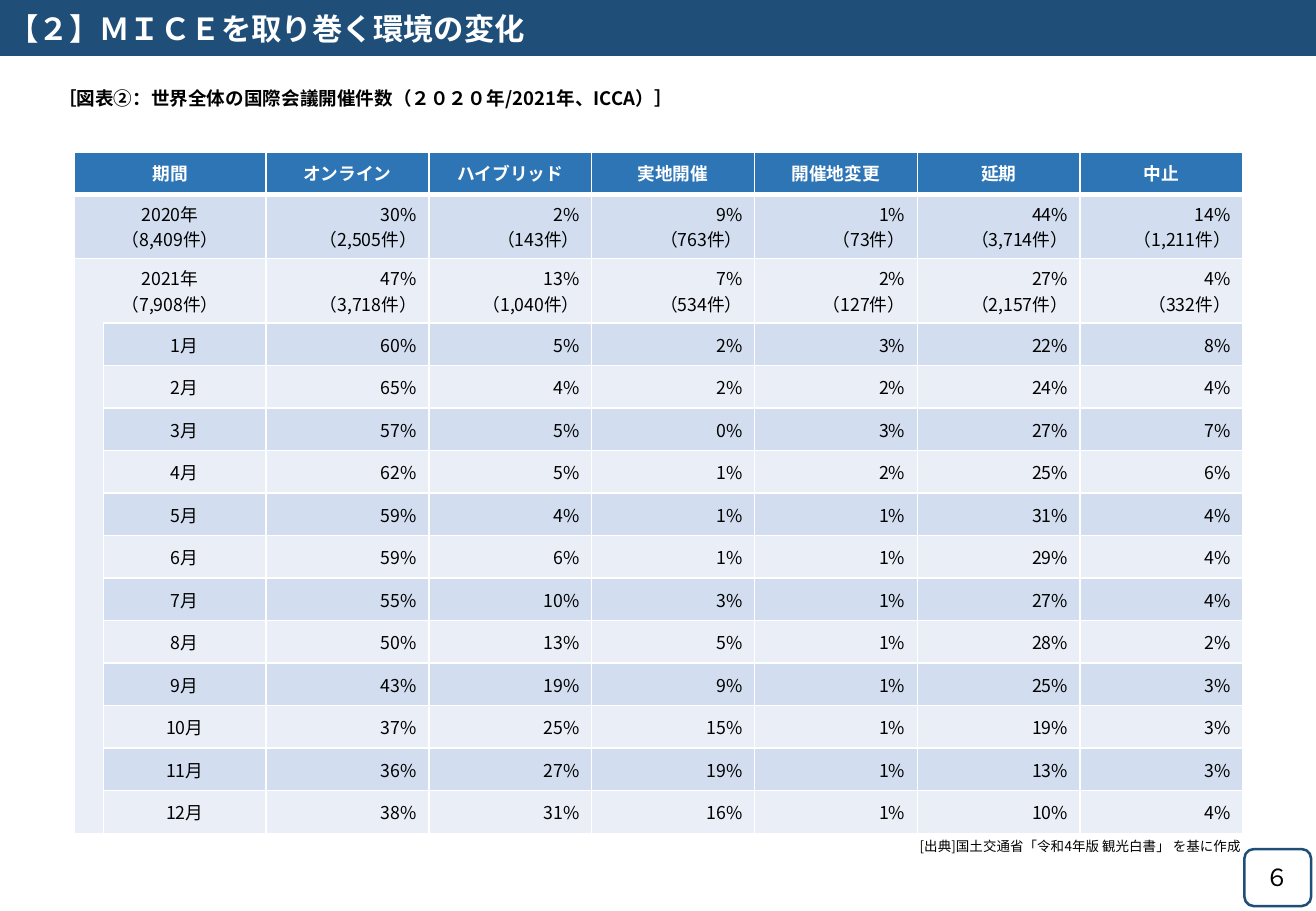
from lxml import etree
from pptx import Presentation
from pptx.dml.color import RGBColor
from pptx.enum.shapes import MSO_SHAPE
from pptx.enum.text import MSO_ANCHOR, PP_ALIGN
from pptx.oxml.ns import qn
from pptx.util import Inches, Pt

TITLE = "【２】ＭＩＣＥを取り巻く環境の変化"
CAPTION = "［図表②：世界全体の国際会議開催件数（２０２０年/2021年、ICCA）］"
CREDIT = "[出典]国土交通省「令和4年版 観光白書」 を基に作成"
PAGE_NUMBER = "６"
HEADINGS = ["期間", "オンライン", "ハイブリッド", "実地開催", "開催地変更", "延期", "中止"]
YEARS = [
    ("2020年", "8,409", [(30, "2,505"), (2, "143"), (9, "763"), (1, "73"), (44, "3,714"), (14, "1,211")]),
    ("2021年", "7,908", [(47, "3,718"), (13, "1,040"), (7, "534"), (2, "127"), (27, "2,157"), (4, "332")]),
]
MONTHS = [
    (60, 5, 2, 3, 22, 8),
    (65, 4, 2, 2, 24, 4),
    (57, 5, 0, 3, 27, 7),
    (62, 5, 1, 2, 25, 6),
    (59, 4, 1, 1, 31, 4),
    (59, 6, 1, 1, 29, 4),
    (55, 10, 3, 1, 27, 4),
    (50, 13, 5, 1, 28, 2),
    (43, 19, 9, 1, 25, 3),
    (37, 25, 15, 1, 19, 3),
    (36, 27, 19, 1, 13, 3),
    (38, 31, 16, 1, 10, 4),
]

FONT = "Noto Sans CJK JP"
NAVY = RGBColor(0x1F, 0x4E, 0x79)
BLUE = RGBColor(0x2E, 0x75, 0xB6)
DARK_BAND = RGBColor(0xD2, 0xDE, 0xEF)
LIGHT_BAND = RGBColor(0xEA, 0xEF, 0xF7)
WHITE = RGBColor(0xFF, 0xFF, 0xFF)
BLACK = RGBColor(0, 0, 0)
LEFT, CENTER, RIGHT = PP_ALIGN.LEFT, PP_ALIGN.CENTER, PP_ALIGN.RIGHT
MIDDLE = MSO_ANCHOR.MIDDLE
RECTANGLE, ROUNDED = MSO_SHAPE.RECTANGLE, MSO_SHAPE.ROUNDED_RECTANGLE

WIDTH, HEIGHT = 10.83, 7.5
GUTTER, COLUMN = 0.24, 1.34
ROW, YEAR_ROW = 0.35, 0.53
FIRST_MONTH = 1 + len(YEARS)


def write(frame, lines, size, color=BLACK, bold=False, align=LEFT):
    frame.word_wrap = True
    frame.text = "\n".join(lines)
    for para in frame.paragraphs:
        para.alignment = align
        font = para.font
        font.name, font.size, font.bold = FONT, Pt(size), bold
        font.color.rgb = color
        for span in para.runs:
            properties = span._r.get_or_add_rPr()
            etree.SubElement(properties, qn("a:ea")).set("typeface", FONT)


def add_box(page, kind, place, fill):
    box = page.shapes.add_shape(kind, *map(Inches, place))
    box.shadow.inherit = False
    box.fill.solid()
    box.fill.fore_color.rgb = fill
    box.line.fill.background()
    box.text_frame.vertical_anchor = MIDDLE
    return box


def add_label(page, place, text, size, bold=False):
    box = page.shapes.add_textbox(*map(Inches, place))
    write(box.text_frame, [text], size, bold=bold)


def draw_borders(cell, widths):
    properties = cell._tc.get_or_add_tcPr()
    for side, width in widths.items():
        line = etree.SubElement(properties, qn("a:ln" + side), w=str(Pt(width)))
        if width:
            paint = etree.SubElement(line, qn("a:solidFill"))
            etree.SubElement(paint, qn("a:srgbClr"), val=str(WHITE))
        else:
            etree.SubElement(line, qn("a:noFill"))


def fill_cell(cell, lines, fill, align, color=BLACK, bold=False, **edges):
    draw_borders(cell, {"L": 1, "R": 1, "T": 1, "B": 1, **edges})
    cell.fill.solid()
    cell.fill.fore_color.rgb = fill
    cell.vertical_anchor = MIDDLE
    write(cell.text_frame, lines, 10.5, color, bold, align)


def add_meetings_table(page):
    widths = [GUTTER] + [COLUMN] * len(HEADINGS)
    heights = [ROW] + [YEAR_ROW] * len(YEARS) + [ROW] * len(MONTHS)
    place = (0.61, 1.25, sum(widths), sum(heights))
    table = page.shapes.add_table(len(heights), len(widths), *map(Inches, place)).table
    for column, width in zip(table.columns, widths):
        column.width = Inches(width)
    for row, height in zip(table.rows, heights):
        row.height = Inches(height)
    for row in range(FIRST_MONTH):
        table.cell(row, 0).merge(table.cell(row, 1))
    gutter = table.cell(FIRST_MONTH, 0)
    gutter.merge(table.cell(len(heights) - 1, 0))

    for index, heading in enumerate(HEADINGS):
        column = index + 1 if index else 0
        fill_cell(table.cell(0, column), [heading], BLUE, CENTER, WHITE, True, B=3)
    for row, (year, total, results) in enumerate(YEARS, 1):
        fill = DARK_BAND if row % 2 else LIGHT_BAND
        bottom = 0 if row == len(YEARS) else 1
        fill_cell(table.cell(row, 0), [year, f"（{total}件）"], fill, CENTER, T=3 if row == 1 else 1, B=bottom)
        for column, (share, count) in enumerate(results, 2):
            fill_cell(table.cell(row, column), [f"{share}%", f"（{count}件）"], fill, RIGHT, T=3 if row == 1 else 1)
    fill_cell(gutter, [""], LIGHT_BAND, LEFT, T=0)
    for month, shares in enumerate(MONTHS, 1):
        row = FIRST_MONTH + month - 1
        fill = DARK_BAND if row % 2 else LIGHT_BAND
        fill_cell(table.cell(row, 1), [f"{month}月"], fill, CENTER)
        for column, share in enumerate(shares, 2):
            fill_cell(table.cell(row, column), [f"{share}%"], fill, RIGHT)


def main():
    deck = Presentation()
    deck.slide_width, deck.slide_height = Inches(WIDTH), Inches(HEIGHT)
    page = deck.slides.add_slide(deck.slide_layouts[6])

    add_meetings_table(page)
    add_label(page, (7.47, 6.85, 2.87, 0.24), CREDIT, 8)

    banner = add_box(page, RECTANGLE, (0, 0, WIDTH, 0.46), NAVY)
    frame = banner.text_frame
    frame.margin_left = frame.margin_right = Inches(0.07)
    frame.margin_top = frame.margin_bottom = Inches(0.04)
    write(frame, [TITLE], 18, WHITE, True)

    add_label(page, (0.38, 0.67, 6.08, 0.37), CAPTION, 11, True)

    number = add_box(page, ROUNDED, (10.24, 6.99, 0.55, 0.47), WHITE)
    number.line.color.rgb = NAVY
    number.line.width = Pt(1.5)
    write(number.text_frame, [PAGE_NUMBER], 14, align=CENTER)

    deck.save("out.pptx")


if __name__ == "__main__":
    main()
